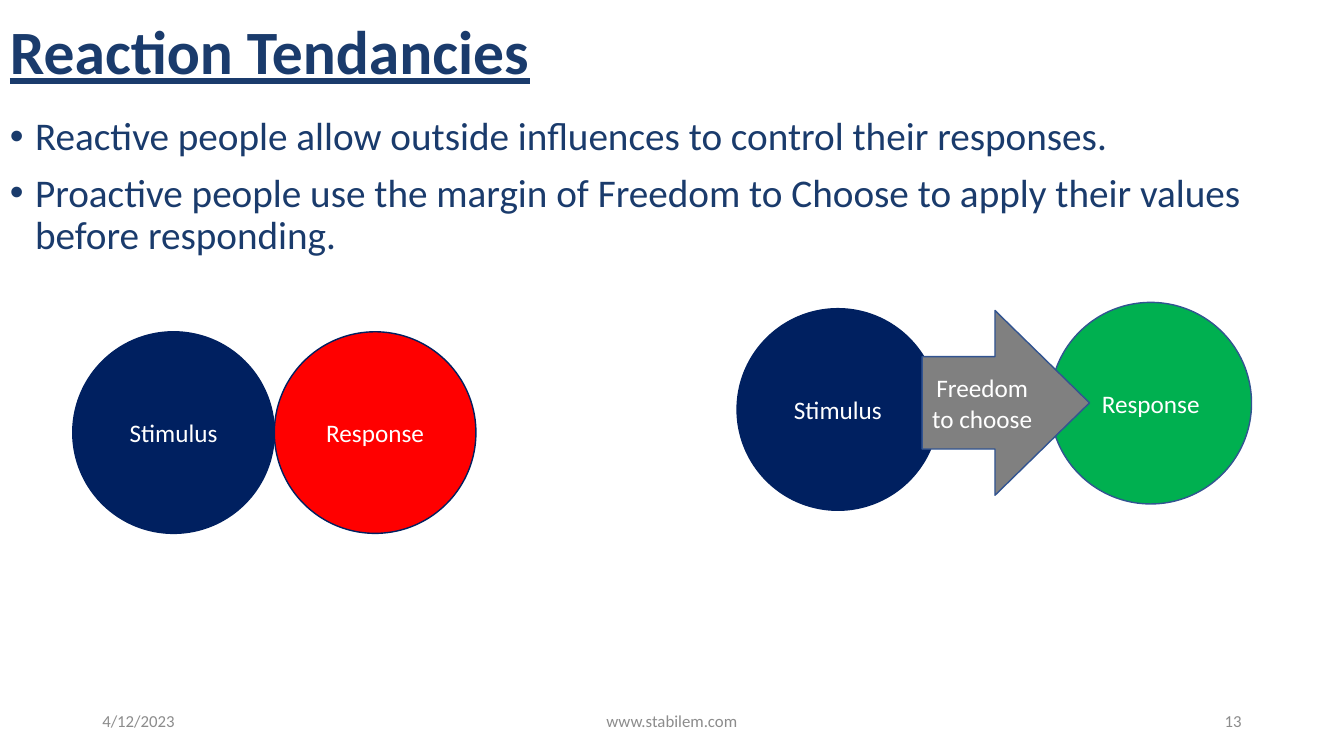
from lxml.etree import SubElement
from pptx import Presentation
from pptx.dml.color import RGBColor as RGB
from pptx.enum.shapes import MSO_SHAPE as SHAPE
from pptx.enum.text import MSO_ANCHOR as ANCHOR, PP_ALIGN as ALIGN
from pptx.oxml.ns import qn
from pptx.util import Pt

THEME = {
    "font": "Calibri",
    "size": {"title": 44, "body": 28, "label": 18, "foot": 12},
    "color": {"text": "1A3B6C", "foot": "8C8C8C", "label": "FFFFFF",
              "navy": "002060", "red": "FF0000", "green": "00B050",
              "gray": "808080", "blue": "325491"},
}

TITLE = "Reaction Tendancies"
POINTS = [
    "Reactive people allow outside influences to control their responses.",
    "Proactive people use the margin of Freedom to Choose to apply their "
    "values before responding.",
]
DISC = 144
# Each group: (kind, text, fill, line, (left, top, width, height))
GROUPS = [
    [(SHAPE.OVAL, "Stimulus", "navy", "navy", (52, 237, DISC, DISC)),
     (SHAPE.OVAL, "Response", "red", "navy", (52 + DISC, 237, DISC, DISC))],
    [(SHAPE.OVAL, "Stimulus", "navy", "navy", (526.5, 220.5, DISC, DISC)),
     (SHAPE.OVAL, "Response", "green", "blue", (750, 216, DISC, DISC)),
     (SHAPE.RIGHT_ARROW, "Freedom to choose", "gray", "blue",
      (658.75, 221.75, 119.5, 132))],
]
HEAD = (0.5, 0.565)
# Footer: (text, align, left, width)
FOOTER = [
    ("4/12/2023", ALIGN.LEFT, 66, 216),
    ("www.stabilem.com", ALIGN.CENTER, 318, 324),
    ("13", ALIGN.RIGHT, 678, 216),
]


def paint(name):
    return RGB.from_string(THEME["color"][name])


def style(para, role, color, align=ALIGN.LEFT):
    para.alignment = align
    for run in para.runs:
        run.font.name = THEME["font"]
        run.font.size = Pt(THEME["size"][role])
        run.font.color.rgb = paint(color)


def add_text(slide, box, lines, role, color, align=ALIGN.LEFT,
             anchor=ANCHOR.MIDDLE):
    frame = slide.shapes.add_textbox(*map(Pt, box)).text_frame
    frame.word_wrap = True
    frame.vertical_anchor = anchor
    frame.text = "\n".join(lines)
    for para in frame.paragraphs:
        style(para, role, color, align)
    return frame.paragraphs


def add_bullet(para, indent=18):
    props = para._p.get_or_add_pPr()
    props.set("marL", str(Pt(indent)))
    props.set("indent", str(-Pt(indent)))
    SubElement(props, qn("a:buFont"), typeface="Arial")
    SubElement(props, qn("a:buChar"), char="•")


def add_node(group, kind, text, fill, line, box):
    node = group.shapes.add_shape(kind, *map(Pt, box))
    node.shadow.inherit = False
    node.fill.solid()
    node.fill.fore_color.rgb = paint(fill)
    node.line.color.rgb = paint(line)
    node.line.width = Pt(1)
    if kind == SHAPE.RIGHT_ARROW:
        for i, value in enumerate(HEAD):
            node.adjustments[i] = value
    frame = node.text_frame
    frame.word_wrap = True
    frame.vertical_anchor = ANCHOR.MIDDLE
    frame.text = text
    style(frame.paragraphs[0], "label", "label", ALIGN.CENTER)


def main():
    deck = Presentation()
    deck.slide_width, deck.slide_height = Pt(960), Pt(540)
    slide = deck.slides.add_slide(deck.slide_layouts[6])

    title = add_text(slide, (0, 0, 790, 78.5), [TITLE], "title", "text")[0]
    title.line_spacing = 0.9
    title.runs[0].font.bold = title.runs[0].font.underline = True

    paras = add_text(slide, (0, 80, 960, 420), POINTS, "body", "text",
                     anchor=ANCHOR.TOP)
    for i, para in enumerate(paras):
        add_bullet(para)
        para.line_spacing = 0.9
        if i:
            para.space_before = Pt(10)

    for nodes in GROUPS:
        group = slide.shapes.add_group_shape()
        for node in nodes:
            add_node(group, *node)

    for text, align, left, width in FOOTER:
        add_text(slide, (left, 500.5, width, 28.75), [text], "foot", "foot",
                 align)
    deck.save("out.pptx")


if __name__ == "__main__":
    main()
